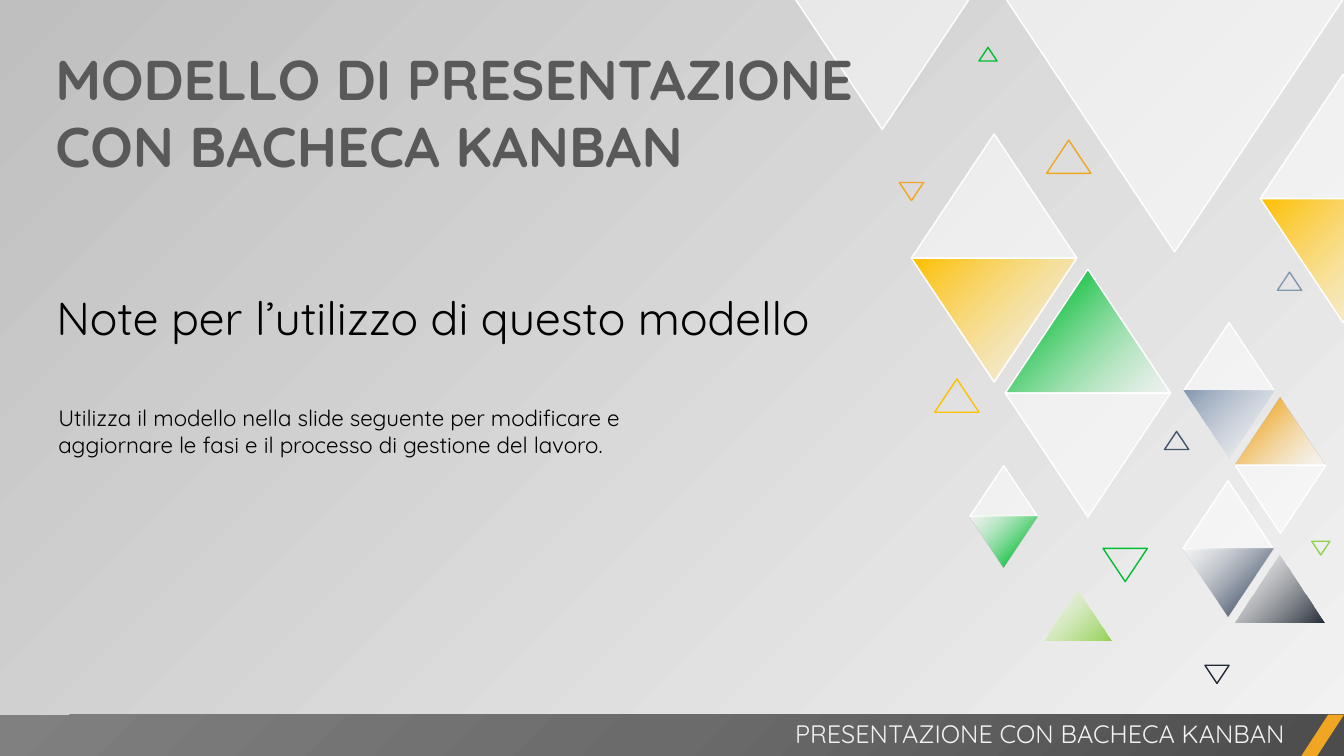
from lxml import etree
from pptx import Presentation
from pptx.dml.color import RGBColor
from pptx.enum.shapes import MSO_SHAPE
from pptx.enum.text import PP_ALIGN
from pptx.oxml.ns import qn
from pptx.util import Inches, Pt

TRI, BAR, SLANT = MSO_SHAPE.ISOSCELES_TRIANGLE, MSO_SHAPE.RECTANGLE, MSO_SHAPE.PARALLELOGRAM
LEFT, RIGHT = PP_ALIGN.LEFT, PP_ALIGN.RIGHT
FONT = "Quicksand"
HUES = {
    "white": "FFFFFF", "pale": "F2F2F2", "silver": "BFBFBF", "black": "000000",
    "gold": "FFC000", "orange": "F0A622", "green": "00BD32", "lime": "92D050",
    "steel": "8497B0", "slate": "44546A", "night": "222A35", "title": "595959",
    "bar1": "4C4C4C", "bar2": "6B6B6B", "bar3": "808080",
}
RGB = {name: RGBColor.from_string(code) for name, code in HUES.items()}


def grade(fill, root, stops, corner=False):
    """Gradient of (position, hue, alpha) stops, from the lower right corner."""
    fill.gradient()
    grad = root.find(".//" + qn("a:gradFill"))
    for child in list(grad):
        grad.remove(child)
    grad.set("rotWithShape", "1")
    row = etree.SubElement(grad, qn("a:gsLst"))
    for pos, hue, alpha in stops:
        stop = etree.SubElement(row, qn("a:gs"), pos=str(pos * 1000))
        color = etree.SubElement(stop, qn("a:srgbClr"), val=HUES[hue])
        if alpha < 100:
            etree.SubElement(color, qn("a:alpha"), val=str(alpha * 1000))
    if corner:
        way = etree.SubElement(grad, qn("a:path"), path="circle")
        etree.SubElement(way, qn("a:fillToRect"), l="100000", t="100000")
    else:
        etree.SubElement(grad, qn("a:lin"), ang=str(225 * 60000), scaled="0")


def draw(x, y, w, flip, style, hue="white"):
    """Triangle: a clear pane, a hue fading out (ramp) or in (veil), or an outline."""
    shape = group.shapes.add_shape(TRI, Inches(x), Inches(y), Inches(w), Inches(w * 0.75))
    shape.shadow.inherit = False
    shape.rotation = 180 if flip else 0
    if style == "pane":
        shape.fill.solid()
        shape.fill.fore_color.rgb = RGB["white"]
        color = shape.element.spPr.find(".//" + qn("a:srgbClr"))
        etree.SubElement(color, qn("a:alpha"), val="50000")
    elif style == "ramp":
        grade(shape.fill, shape.element, [(0, hue, 100), (100, "white", 50)])
    elif style == "veil":
        grade(shape.fill, shape.element, [(0, "white", 50), (82, hue, 100)])
    else:
        shape.fill.background()
    if style in ("ramp", "veil") and w < 1:
        shape.line.fill.background()
    else:
        shape.line.color.rgb = RGB[hue if style == "line" else "white"]
        shape.line.width = Pt(1)


deck = Presentation()
deck.slide_width, deck.slide_height = Inches(13.33), Inches(7.5)
slide = deck.slides.add_slide(deck.slide_layouts[6])
grade(slide.background.fill, slide.element, [(0, "pale", 40), (100, "silver", 100)])

# Diamonds: an upright triangle over a flipped one
group = slide.shapes.add_group_shape()
PANE = ("pane",)
for x, y, w, top, base in [
    (9.04, 1.33, 1.64, PANE, ("ramp", "gold")),
    (9.97, 2.67, 1.64, ("veil", "green"), PANE),
    (11.73, 4.77, 0.9, PANE, ("veil", "slate")),
    (11.74, 3.2, 0.9, PANE, ("ramp", "steel")),
    (12.25, 3.94, 0.9, ("veil", "orange"), PANE),
    (9.62, 4.62, 0.67, PANE, ("veil", "green")),
    (12.5, 0.74, 1.64, PANE, ("ramp", "gold")),
]:
    draw(x, y, w, False, *top)
    draw(x, y + w * 0.75, w, True, *base)

# Single filled triangles
draw(9.97, -0.02, 3.36, True, "pane")
draw(7.88, -0.02, 1.74, True, "pane")
draw(12.24, 5.5, 0.9, False, "ramp", "night")
draw(10.35, 5.85, 0.67, False, "ramp", "lime")

# Outlined triangles
for x, y, w, flip, hue in [
    (10.94, 5.44, 0.44, True, "green"),
    (9.27, 3.76, 0.44, False, "gold"),
    (10.38, 1.39, 0.44, False, "orange"),
    (11.55, 4.28, 0.24, False, "slate"),
    (11.95, 6.6, 0.24, True, "night"),
    (8.92, 1.81, 0.24, True, "orange"),
    (12.67, 2.7, 0.24, False, "steel"),
    (9.71, 0.47, 0.18, False, "green"),
    (13.01, 5.37, 0.18, True, "lime"),
]:
    draw(x, y, w, flip, "line", hue)

# Footer bar with slanted accent
bar = slide.shapes.add_shape(BAR, 0, Inches(7.09), Inches(13.33), Inches(0.42))
grade(bar.fill, bar.element, [(0, "bar1", 100), (50, "bar2", 100), (100, "bar3", 100)], True)
slant = slide.shapes.add_shape(SLANT, Inches(12.9), Inches(7.09), Inches(0.43), Inches(0.42))
slant.adjustments[0] = 0.65
slant.fill.solid()
slant.fill.fore_color.rgb = RGB["orange"]
for shape in (bar, slant):
    shape.shadow.inherit = False
    shape.line.fill.background()

# Texts
for x, y, w, h, text, size, hue, bold, align, after in [
    (0.45, 0.39, 8.33, 1.45, "MODELLO DI PRESENTAZIONE CON BACHECA KANBAN",
     40, "title", True, LEFT, 0),
    (2.73, 7.08, 10.11, 0.4, "PRESENTAZIONE CON BACHECA KANBAN",
     18, "pale", False, RIGHT, 0),
    (0.46, 2.82, 10.11, 0.66, "Note per l’utilizzo di questo modello",
     33, "black", False, LEFT, 0),
    (0.48, 3.96, 6.58, 0.64, "Utilizza il modello nella slide seguente per modificare e "
     "aggiornare le fasi e il processo di gestione del lavoro.",
     16, "black", False, LEFT, 10),
]:
    frame = slide.shapes.add_textbox(Inches(x), Inches(y), Inches(w), Inches(h)).text_frame
    frame.word_wrap = True
    para = frame.paragraphs[0]
    para.text = text
    para.alignment = align
    para.space_after = Pt(after)
    para.font.name, para.font.size, para.font.bold = FONT, Pt(size), bold
    para.font.color.rgb = RGB[hue]

deck.save("out.pptx")
